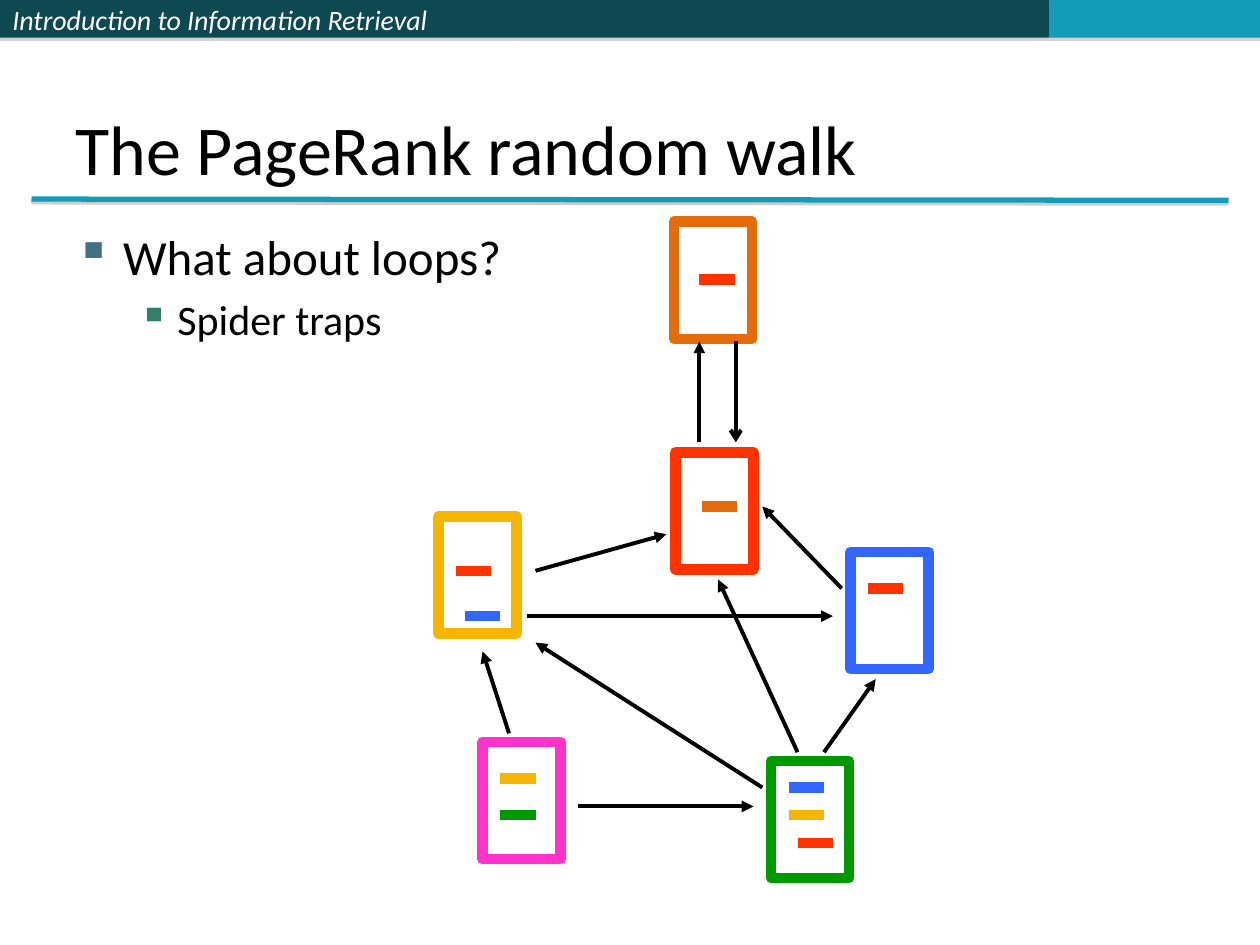
from lxml import etree
from pptx import Presentation
from pptx.dml.color import RGBColor
from pptx.enum.shapes import MSO_CONNECTOR, MSO_SHAPE
from pptx.enum.text import MSO_ANCHOR, PP_ALIGN
from pptx.oxml.ns import qn
from pptx.util import Pt

PX = 9144
FONT = "Calibri"
STRAIGHT = MSO_CONNECTOR.STRAIGHT
RECT = MSO_SHAPE.RECTANGLE
TOP, MIDDLE, BOTTOM = MSO_ANCHOR.TOP, MSO_ANCHOR.MIDDLE, MSO_ANCHOR.BOTTOM
LEFT = PP_ALIGN.LEFT
COLORS = {
    "white": "FFFFFF", "black": "000000", "shadow": "808080",
    "dark": "0E4851", "teal": "139CB7",
    "bullet": "437085", "subbullet": "357E69",
    "yellow": "F5B603", "pink": "FF33CC", "green": "009900",
    "blue": "3366FF", "red": "FF3300", "orange": "E46C0A",
}
PAGE_W, PAGE_H, LINK_W = 62, 93, 28
PAGES = [
    ("yellow", 0, 234, [("blue", 21, 79), ("red", 14, 43)]),
    ("pink", 35, 413, [("green", 14, 58), ("yellow", 14, 29)]),
    ("green", 264, 428, [("yellow", 14, 43), ("blue", 14, 21), ("red", 21, 65)]),
    ("blue", 327, 262, [("red", 14, 29)]),
    ("red", 188, 183, [("orange", 21, 43)]),
    ("orange", 187, 0, [("red", 20, 46)]),
]
ARROWS = [
    (111, 464, 250, 464, "triangle"),
    (56, 406, 35, 341, "triangle"),
    (77, 277, 181, 248, "triangle"),
    (70, 313, 313, 313, "triangle"),
    (320, 291, 257, 226, "triangle"),
    (285, 421, 222, 284, "triangle"),
    (306, 421, 347, 363, "triangle"),
    (257, 449, 77, 334, "triangle"),
    (207, 175, 207, 95, "triangle"),
    (236, 95, 236, 175, "arrow"),
]


def px(*values):
    return [v * PX for v in values]


def rgb(name):
    return RGBColor.from_string(COLORS[name])


def add_xml(parent, tag, **attrs):
    return etree.SubElement(parent, qn(tag), {k: str(v) for k, v in attrs.items()})


def cast_shadow(effects, distance, opacity):
    shadow = add_xml(effects, "a:outerShdw", blurRad=0, dist=Pt(distance),
                     dir=5400000, rotWithShape=0)
    color = add_xml(shadow, "a:srgbClr", val=COLORS["shadow"])
    add_xml(color, "a:alpha", val=opacity * 1000)


def add_rect(s, x, y, w, h, fill, border=None):
    sp = s.shapes.add_shape(RECT, *px(x, y, w, h))
    sp.shadow.inherit = False
    sp.fill.solid()
    sp.fill.fore_color.rgb = rgb(fill)
    if border:
        sp.line.color.rgb = rgb(border)
        sp.line.width = Pt(6)
    else:
        sp.line.fill.background()
    return sp


def add_line(s, x1, y1, x2, y2, color, width, arrow=None):
    c = s.shapes.add_connector(STRAIGHT, *px(x1, y1, x2, y2))
    c.line.color.rgb = rgb(color)
    c.line.width = Pt(width)
    if arrow:
        add_xml(c.line._get_or_add_ln(), "a:tailEnd", type=arrow)
    return add_xml(c._element.spPr, "a:effectLst")


def write(p, text, size, color, italic=False):
    p.text = text
    p.alignment = LEFT
    r = p.runs[0]
    r.font.name = FONT
    r.font.size = Pt(size)
    r.font.italic = italic
    r.font.color.rgb = rgb(color)


def add_text_frame(s, x, y, w, h, anchor):
    tf = s.shapes.add_textbox(*px(x, y, w, h)).text_frame
    tf.word_wrap = True
    tf.vertical_anchor = anchor
    return tf


def add_header(s, x, y, h):
    for w, fill, text in [(408, "dark", "Introduction to Information Retrieval"),
                          (425, "dark", ""), (167, "teal", "")]:
        sp = add_rect(s, x, y, w, h, fill)
        cast_shadow(sp._element.spPr.find(qn("a:effectLst")), 1.8, 35)
        if text:
            tf = sp.text_frame
            tf.vertical_anchor = MIDDLE
            write(tf.paragraphs[0], text, 16, "white", True)
        x += w


def add_title(s, x, y, w, h):
    effects = add_line(s, x - 25, y + h + 3, x + w + 25, y + h + 4, "teal", 3)
    cast_shadow(effects, 1.6, 38)
    tf = add_text_frame(s, x, y, w, h, BOTTOM)
    write(tf.paragraphs[0], "The PageRank random walk", 40, "black")


def add_body(s, x, y, w, h):
    tf = add_text_frame(s, x, y, w, h, TOP)
    items = [("What about loops?", 28, "bullet", 38, 38),
             ("Spider traps", 24, "subbullet", 81, 31)]
    for level, (text, size, color, margin, hang) in enumerate(items):
        p = tf.add_paragraph() if level else tf.paragraphs[0]
        write(p, text, size, "black")
        p.level = level
        p.space_before = Pt(size * 0.2)
        pPr = p._p.get_or_add_pPr()
        pPr.set("marL", str(margin * PX))
        pPr.set("indent", str(-hang * PX))
        add_xml(add_xml(pPr, "a:buClr"), "a:srgbClr", val=COLORS[color])
        add_xml(pPr, "a:buChar", char="▪")


def add_page(s, x, y, color, links):
    add_rect(s, x, y, PAGE_W, PAGE_H, "white", color)
    for target, dx, dy in links:
        add_line(s, x + dx, y + dy, x + dx + LINK_W, y + dy, target, 6)


def add_graph(s, x, y):
    for color, dx, dy, links in PAGES:
        add_page(s, x + dx, y + dy, color, links)
    for x1, y1, x2, y2, arrow in ARROWS:
        add_line(s, x + x1, y + y1, x + x2, y + y2, "black", 2.25, arrow)


def main():
    prs = Presentation()
    prs.slide_width, prs.slide_height = px(1000, 750)
    s = prs.slides.add_slide(prs.slide_layouts[6])
    add_header(s, 0, 0, 30)
    add_title(s, 50, 30, 900, 125)
    add_body(s, 50, 175, 900, 542)
    add_graph(s, 348, 176)
    prs.save("out.pptx")


if __name__ == "__main__":
    main()
